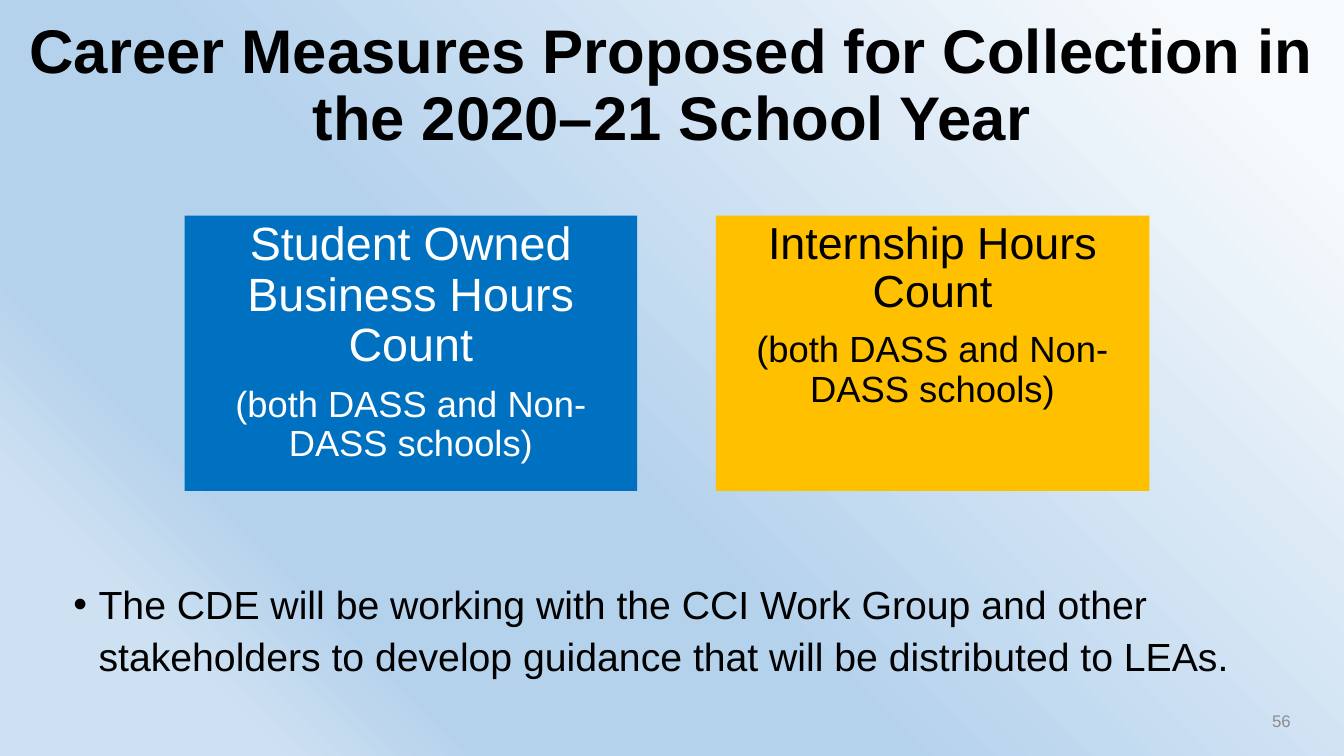
from pptx import Presentation
from pptx.dml.color import RGBColor
from pptx.enum.shapes import MSO_SHAPE
from pptx.enum.text import MSO_ANCHOR, PP_ALIGN
from pptx.oxml import parse_xml
from pptx.oxml.ns import nsdecls, qn
from pptx.util import Inches, Pt

COLORS = {"black": "000000", "white": "FFFFFF", "blue": "0070C0",
          "gold": "FFC000", "gray": "8C8C8C", "pale": "F7FAFD",
          "sky": "B5D2EC", "mist": "CEE1F2"}
STOPS = [(8, "pale"), (57, "sky"), (77, "sky"), (87, "mist")]
TITLE = "Career Measures Proposed for Collection in the 2020–21 School Year"
SCOPE = "(both DASS and Non-DASS schools)"
CARDS = [
    (1.83, 4.49, "blue", "white", [("Student Owned Business Hours Count", 33.3), (SCOPE, 25.9)]),
    (7.1, 4.3, "gold", "black", [("Internship Hours Count", 32), (SCOPE, 26)]),
]
NOTE = ("The CDE will be working with the CCI Work Group and other "
        "stakeholders to develop guidance that will be distributed to LEAs.")
PAGE = "56"

HEAD = {"alignment": PP_ALIGN.CENTER, "line_spacing": 0.9}
BODY = {**HEAD, "space_before": Pt(10)}
ITEM = {"alignment": PP_ALIGN.LEFT, "line_spacing": 1.1,
        "space_before": Pt(6), "space_after": Pt(6)}
FOOT = {"alignment": PP_ALIGN.RIGHT}


def rgb(name):
    return RGBColor.from_string(COLORS[name])


def apply(target, values):
    for key, value in values.items():
        setattr(target, key, value)


def write(shape, lines, color, form, anchor=MSO_ANCHOR.TOP, bold=False):
    frame = shape.text_frame
    apply(frame, {"word_wrap": True, "vertical_anchor": anchor})
    for i, (text, size) in enumerate(lines):
        para = frame.add_paragraph() if i else frame.paragraphs[0]
        apply(para, form)
        run = para.add_run()
        run.text = text
        apply(run.font, {"name": "Arial", "size": Pt(size), "bold": bold})
        run.font.color.rgb = rgb(color)


def add_text(slide, area, *args, **more):
    box = slide.shapes.add_textbox(*map(Inches, area))
    write(box, *args, **more)
    return box


def add_card(slide, left, width, fill, color, lines):
    area = map(Inches, (left, 2.14, width, 2.73))
    card = slide.shapes.add_shape(MSO_SHAPE.RECTANGLE, *area)
    card.shadow.inherit = False
    card.fill.solid()
    card.fill.fore_color.rgb = rgb(fill)
    card.line.fill.background()
    write(card, lines, color, BODY)


def add_bullet(para):
    props = para._p.get_or_add_pPr()
    props.set("marL", str(Inches(0.25)))
    props.set("indent", str(Inches(-0.25)))
    props.append(parse_xml(f'<a:buFont {nsdecls("a")} typeface="Arial"/>'))
    props.append(parse_xml(f'<a:buChar {nsdecls("a")} char="•"/>'))


def paint(slide):
    fill = slide.background.fill
    fill.gradient()
    fill.gradient_angle = 225
    stops = next(slide._element.iter(qn("a:gsLst")))
    for stop in list(stops):
        stops.remove(stop)
    for place, name in STOPS:
        stops.append(parse_xml(
            f'<a:gs {nsdecls("a")} pos="{place * 1000}">'
            f'<a:srgbClr val="{COLORS[name]}"/></a:gs>'))


def main():
    deck = Presentation()
    apply(deck, {"slide_width": Inches(13.33), "slide_height": Inches(7.5)})
    slide = deck.slides.add_slide(deck.slide_layouts[6])
    paint(slide)
    add_text(slide, (0, 0, 13.33, 1.73), [(TITLE, 44)], "black", HEAD,
             anchor=MSO_ANCHOR.MIDDLE, bold=True)
    for card in CARDS:
        add_card(slide, *card)
    note = add_text(slide, (0.63, 5.66, 12, 1.29), [(NOTE, 28)], "black", ITEM)
    add_bullet(note.text_frame.paragraphs[0])
    add_text(slide, (9.9, 6.95, 3, 0.4), [(PAGE, 12)], "gray", FOOT,
             anchor=MSO_ANCHOR.MIDDLE)
    deck.save("out.pptx")


if __name__ == "__main__":
    main()
